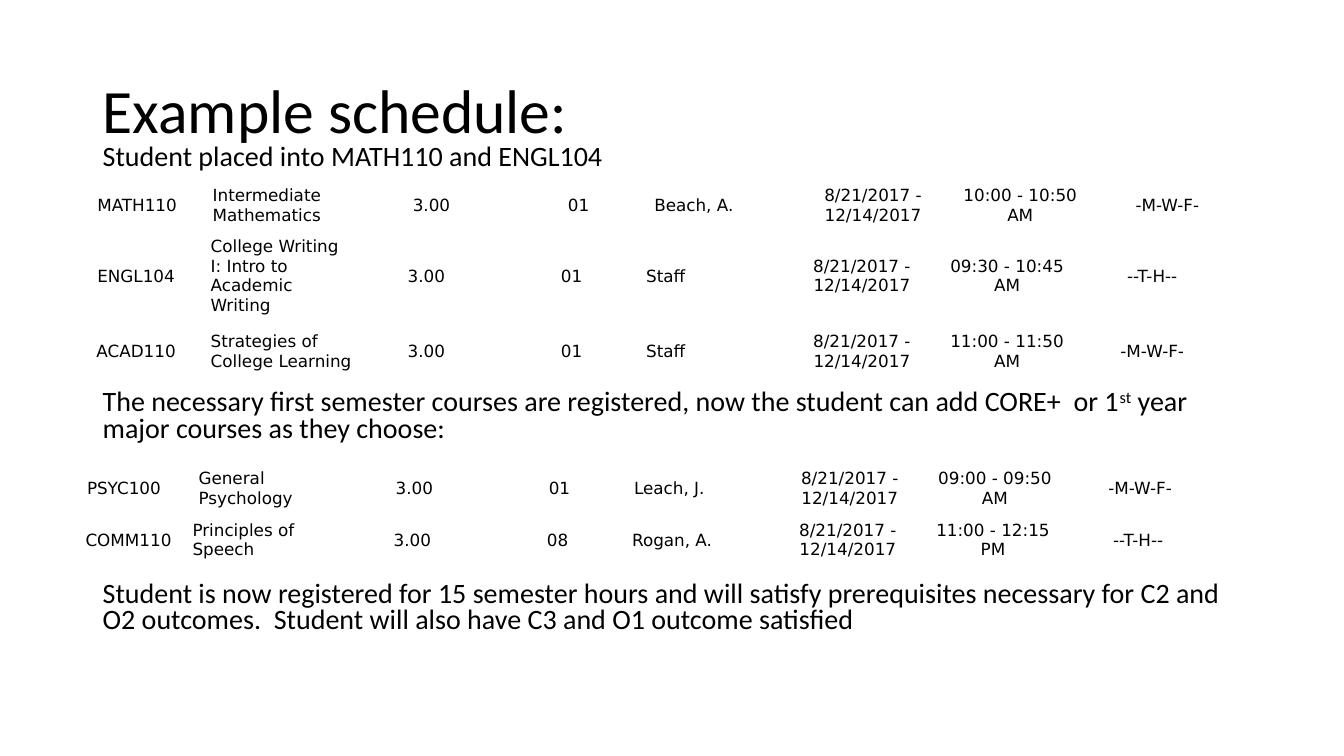
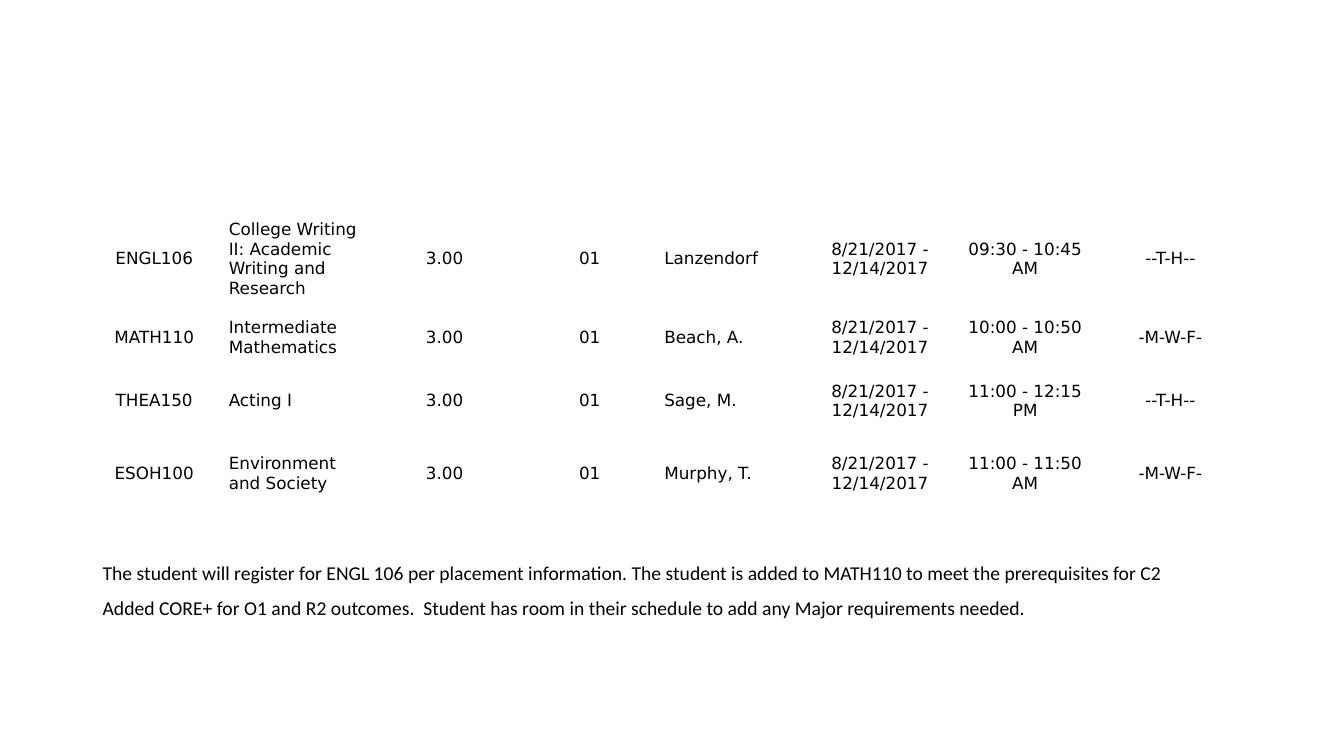
from dataclasses import dataclass

import pptx
import pptx.dml.color
import pptx.enum.text
import pptx.presentation
import pptx.slide
import pptx.text.text
import pptx.util

Inches = pptx.util.Inches
Pt = pptx.util.Pt
Align = pptx.enum.text.PP_ALIGN
Anchor = pptx.enum.text.MSO_ANCHOR


@dataclass(frozen=True)
class Theme:
    paper: pptx.dml.color.RGBColor = pptx.dml.color.RGBColor(255, 255, 255)
    ink: pptx.dml.color.RGBColor = pptx.dml.color.RGBColor(0, 0, 0)
    text_font: str = "Calibri"
    table_font: str = "DejaVu Sans"
    title_size: int = 44
    body_size: int = 20
    note_size: int = 14
    table_size: int = 12
    cell_inset: float = 0.02
    text_left: float = 0.92
    text_width: float = 11.5
    paragraph_gap: int = 10
    plain_table_style: str = "{2D5ABB26-0587-4C30-8999-92F81FD0307C}"


THEME = Theme()
TERM = "8/21/2017 - 12/14/2017"
LEFT_ALIGNED_FIELDS = (1, 4)  # course name and instructor


@dataclass(frozen=True)
class Span:
    text: str
    superscript: bool = False


@dataclass(frozen=True)
class TextBlock:
    top: float
    height: float
    paragraphs: tuple[tuple[Span, ...], ...]
    size: int
    line_spacing: float = 0.9
    anchor: Anchor = Anchor.TOP


@dataclass(frozen=True)
class Course:
    code: str
    name: str
    section: str
    instructor: str
    hours: str
    days: str

    def fields(self) -> tuple[str, ...]:
        return (self.code, self.name, "3.00", self.section,
                self.instructor, TERM, self.hours, self.days)


@dataclass(frozen=True)
class CourseTable:
    """One table row showing the course fields from first up to end."""
    course: Course
    left: float
    top: float
    height: float = 0.43
    column_width: float = 1.44
    first: int = 0
    end: int = 8


@dataclass(frozen=True)
class PageContent:
    texts: tuple[TextBlock, ...]
    tables: tuple[CourseTable, ...]


SPEECH = Course("COMM110", "Principles of Speech", "08", "Rogan, A.",
                "11:00 - 12:15 PM", "--T-H--")
MATHEMATICS = Course("MATH110", "Intermediate Mathematics", "01", "Beach, A.",
                     "10:00 - 10:50 AM", "-M-W-F-")

PAGES = (
    PageContent(
        texts=(
            TextBlock(0.4, 1.45, ((Span("Example schedule:"),),),
                      THEME.title_size, anchor=Anchor.MIDDLE),
            TextBlock(1.39, 0.4, ((Span("Student placed into MATH110 and ENGL104"),),),
                      THEME.body_size, 0.8),
            TextBlock(3.82, 0.7, ((
                Span("The necessary first semester courses are registered, "
                     "now the student can add CORE+  or 1"),
                Span("st", superscript=True),
                Span(" year major courses as they choose:")),),
                THEME.body_size, 0.8),
            TextBlock(5.72, 0.7, ((
                Span("Student is now registered for 15 semester hours and will satisfy "
                     "prerequisites necessary for C2 and O2 outcomes.  "
                     "Student will also have C3 and O1 outcome satisfied"),),),
                THEME.body_size, 0.8),
        ),
        tables=(
            CourseTable(MATHEMATICS, 0.63, 1.82, column_width=1.46),
            CourseTable(Course("ENGL104", "College Writing I: Intro to Academic Writing",
                               "01", "Staff", "09:30 - 10:45 AM", "--T-H--"),
                        0.63, 2.32, 0.83),
            CourseTable(Course("ACAD110", "Strategies of College Learning",
                               "01", "Staff", "11:00 - 11:50 AM", "-M-W-F-"),
                        0.63, 3.27),
            CourseTable(Course("PSYC100", "General Psychology",
                               "01", "Leach, J.", "09:00 - 09:50 AM", "-M-W-F-"),
                        0.51, 4.63),
            CourseTable(SPEECH, 0.66, 5.14, column_width=1.23, end=2),
            CourseTable(SPEECH, 3.37, 5.12, 0.48, first=2),
        ),
    ),
    PageContent(
        texts=(
            TextBlock(5.54, 0.8, (
                (Span("The student will register for ENGL 106 per placement information. "
                      "The student is added to MATH110 to meet the prerequisites for C2"),),
                (Span("Added CORE+ for O1 and R2 outcomes.  Student has room in their "
                      "schedule to add any Major requirements needed."),)),
                THEME.note_size),
        ),
        tables=(
            CourseTable(Course("ENGL106", "College Writing II: Academic Writing and Research",
                               "01", "Lanzendorf", "09:30 - 10:45 AM", "--T-H--"),
                        0.81, 2.15, 0.83),
            CourseTable(MATHEMATICS, 0.81, 3.13),
            CourseTable(Course("THEA150", "Acting I", "01", "Sage, M.",
                               "11:00 - 12:15 PM", "--T-H--"),
                        0.81, 3.76),
            CourseTable(Course("ESOH100", "Environment and Society", "01", "Murphy, T.",
                               "11:00 - 11:50 AM", "-M-W-F-"),
                        0.81, 4.48),
        ),
    ),
)


def add_span(para: pptx.text.text._Paragraph, span: Span, font: str, size: int) -> None:
    run = para.add_run()
    run.text = span.text
    run.font.name = font
    run.font.size = Pt(size)
    run.font.color.rgb = THEME.ink
    if span.superscript:
        run.font._element.set("baseline", "30000")


def add_text(page: pptx.slide.Slide, block: TextBlock) -> None:
    box = page.shapes.add_textbox(Inches(THEME.text_left), Inches(block.top),
                                  Inches(THEME.text_width), Inches(block.height))
    frame = box.text_frame
    frame.word_wrap = True
    frame.vertical_anchor = block.anchor
    for index, spans in enumerate(block.paragraphs):
        para = frame.add_paragraph() if index else frame.paragraphs[0]
        para.line_spacing = block.line_spacing
        if index:
            para.space_before = Pt(THEME.paragraph_gap)
        for span in spans:
            add_span(para, span, THEME.text_font, block.size)


def add_course_table(page: pptx.slide.Slide, row: CourseTable) -> None:
    count = row.end - row.first
    table = page.shapes.add_table(
        1, count, Inches(row.left), Inches(row.top),
        Inches(row.column_width * count), Inches(row.height)).table
    table.first_row = False
    table.horz_banding = False
    table._tbl.tblPr.find(pptx.oxml.ns.qn("a:tableStyleId")).text = THEME.plain_table_style
    fields = row.course.fields()
    for column, field in enumerate(range(row.first, row.end)):
        table.columns[column].width = Inches(row.column_width)
        cell = table.cell(0, column)
        cell.fill.background()
        cell.vertical_anchor = Anchor.MIDDLE
        inset = Inches(THEME.cell_inset)
        cell.margin_left = cell.margin_right = inset
        cell.margin_top = cell.margin_bottom = inset
        para = cell.text_frame.paragraphs[0]
        para.alignment = Align.LEFT if field in LEFT_ALIGNED_FIELDS else Align.CENTER
        add_span(para, Span(fields[field]), THEME.table_font, THEME.table_size)


def add_page(deck: pptx.presentation.Presentation, content: PageContent) -> None:
    page = deck.slides.add_slide(deck.slide_layouts[6])
    page.background.fill.solid()
    page.background.fill.fore_color.rgb = THEME.paper
    for block in content.texts:
        add_text(page, block)
    for row in content.tables:
        add_course_table(page, row)


def main() -> None:
    deck = pptx.Presentation()
    deck.slide_width = Inches(13.33)
    deck.slide_height = Inches(7.5)
    for content in PAGES:
        add_page(deck, content)
    deck.save("out.pptx")


if __name__ == "__main__":
    main()
